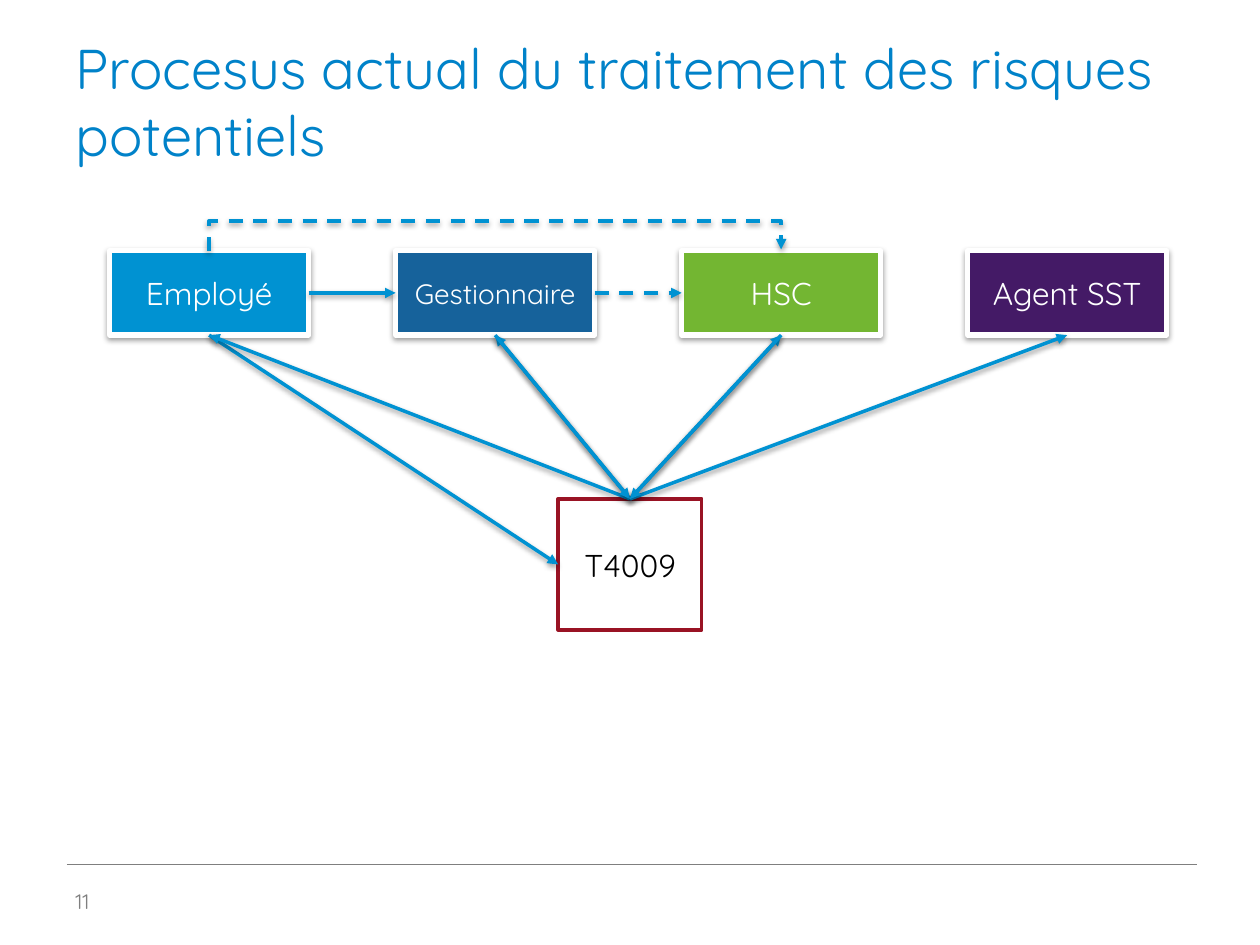
from dataclasses import dataclass

from lxml.etree import SubElement
from pptx import Presentation
from pptx.dml.color import RGBColor
from pptx.enum.dml import MSO_LINE as Dash
from pptx.enum.shapes import MSO_CONNECTOR as Link, MSO_SHAPE as Shape
from pptx.enum.text import MSO_ANCHOR as Anchor, PP_ALIGN as Align
from pptx.oxml.ns import qn
from pptx.util import Pt

PX = 9144  # 100 px to the inch
TOP, LEFT, BOTTOM, RIGHT = range(4)


@dataclass(frozen=True)
class Theme:
    font: str = "Quicksand"
    title: str = "0082C9"
    flow: str = "0092D2"
    grey: str = "7F7F7F"
    white: str = "FFFFFF"
    black: str = "000000"
    red: str = "991324"
    blue: str = "16629B"
    green: str = "73B632"
    purple: str = "441A66"
    head: int = 32
    body: int = 18
    small: int = 16
    note: int = 12


THEME = Theme()


def px(*vals):
    return [round(v * PX) for v in vals]


def rgb(code):
    return RGBColor.from_string(code)


def write(shape, text, size=THEME.body, color=THEME.white,
          align=Align.CENTER, anchor=Anchor.MIDDLE, space=None):
    frame = shape.text_frame
    frame.word_wrap = True
    frame.vertical_anchor = anchor
    para = frame.paragraphs[0]
    para.text = text
    para.alignment = align
    para.line_spacing = space
    para.font.name = THEME.font
    para.font.size = Pt(size)
    para.font.color.rgb = rgb(color)


def label(slide, box, text, **style):
    write(slide.shapes.add_textbox(*px(*box)), text, align=Align.LEFT, **style)


def shade(props):
    """Put a soft shadow below the shape that owns these properties."""
    effects = props.find(qn("a:effectLst"))
    if effects is None:
        effects = SubElement(props, qn("a:effectLst"))
    drop = SubElement(effects, qn("a:outerShdw"), blurRad="40000",
                      dist="20000", dir="5400000", rotWithShape="0")
    tint = SubElement(drop, qn("a:srgbClr"), val=THEME.black)
    SubElement(tint, qn("a:alpha"), val="38000")


def block(slide, box, text, fill, edge, width, shadow=True, **style):
    shape = slide.shapes.add_shape(Shape.RECTANGLE, *px(*box))
    shape.fill.solid()
    shape.fill.fore_color.rgb = rgb(fill)
    shape.line.color.rgb = rgb(edge)
    shape.line.width = Pt(width)
    shape.shadow.inherit = False
    if shadow:
        shade(shape._element.spPr)
    write(shape, text, **style)
    return shape


def dress(line, dashed=False):
    """Give a connector the look of a flow arrow."""
    line.line.color.rgb = rgb(THEME.flow)
    line.line.width = Pt(2)
    if dashed:
        line.line.dash_style = Dash.DASH
    props = line._element.spPr
    SubElement(props.find(qn("a:ln")), qn("a:tailEnd"), type="triangle")
    shade(props)


def arrow(slide, start, side, end, stop, dashed=False):
    line = slide.shapes.add_connector(Link.STRAIGHT, 0, 0, 0, 0)
    line.begin_connect(start, side)
    line.end_connect(end, stop)
    dress(line, dashed)


def bypass(slide, start, end, rise):
    """Run a dashed elbow above the row, from one top side to another."""
    first, last = (s.left + s.width // 2 for s in (start, end))
    mid, span = (first + last) // 2, last - first
    left, top = mid - PX // 2, start.top - PX // 2 - span // 2
    line = slide.shapes.add_connector(
        Link.ELBOW, left + PX, top + span, left, top)
    props = line._element.spPr
    props.find(qn("a:xfrm")).set("rot", "5400000")
    shape = props.find(qn("a:prstGeom"))
    values = shape.find(qn("a:avLst"))
    if values is None:
        values = SubElement(shape, qn("a:avLst"))
    SubElement(values, qn("a:gd"), name="adj1", fmla=f"val {rise * 100000}")
    dress(line, dashed=True)


def header(slide, box):
    label(slide, box, "Procesus actual du traitement des risques potentiels",
          size=THEME.head, color=THEME.title, anchor=Anchor.BOTTOM)


def footer(slide, box):
    x, y, w, h = box
    rule = slide.shapes.add_connector(
        Link.STRAIGHT, *px(x + 3, y, x + w, y))
    rule.line.color.rgb = rgb(THEME.grey)
    rule.line.width = Pt(0.25)
    SubElement(rule._element.spPr, qn("a:effectLst"))
    label(slide, (x, y + 9, 107, h - 9), "11",
          size=THEME.note, color=THEME.grey)


def process(slide, box):
    x, y, w, h = box
    wide, high = 158, 67
    roles = [
        ("Employé", THEME.flow, THEME.body),
        ("Gestionnaire", THEME.blue, THEME.small),
        ("HSC", THEME.green, THEME.body),
        ("Agent SST", THEME.purple, THEME.body),
    ]
    step = (w - wide) // (len(roles) - 1)
    row = [
        block(slide, (x + i * step, y, wide, high), name, fill,
              THEME.white, 3, size=size)
        for i, (name, fill, size) in enumerate(roles)
    ]
    staff, boss, panel, agent = row
    form = block(slide, (x + 356, y + h - 104, 114, 104), "T4009",
                 THEME.white, THEME.red, 2, shadow=False, color=THEME.black)

    arrow(slide, staff, BOTTOM, form, LEFT)
    arrow(slide, staff, RIGHT, boss, LEFT)
    bypass(slide, staff, panel, rise=24)
    arrow(slide, boss, RIGHT, panel, LEFT, dashed=True)
    for role in row:
        arrow(slide, form, TOP, role, BOTTOM)
    for role in (boss, panel):
        arrow(slide, role, BOTTOM, form, TOP)


def main():
    deck = Presentation()
    deck.slide_width, deck.slide_height = px(1000, 750)
    slide = deck.slides.add_slide(deck.slide_layouts[6])
    footer(slide, (50, 686, 900, 49))
    header(slide, (50, 30, 900, 108))
    process(slide, (87, 199, 839, 301))
    deck.save("out.pptx")


if __name__ == "__main__":
    main()
